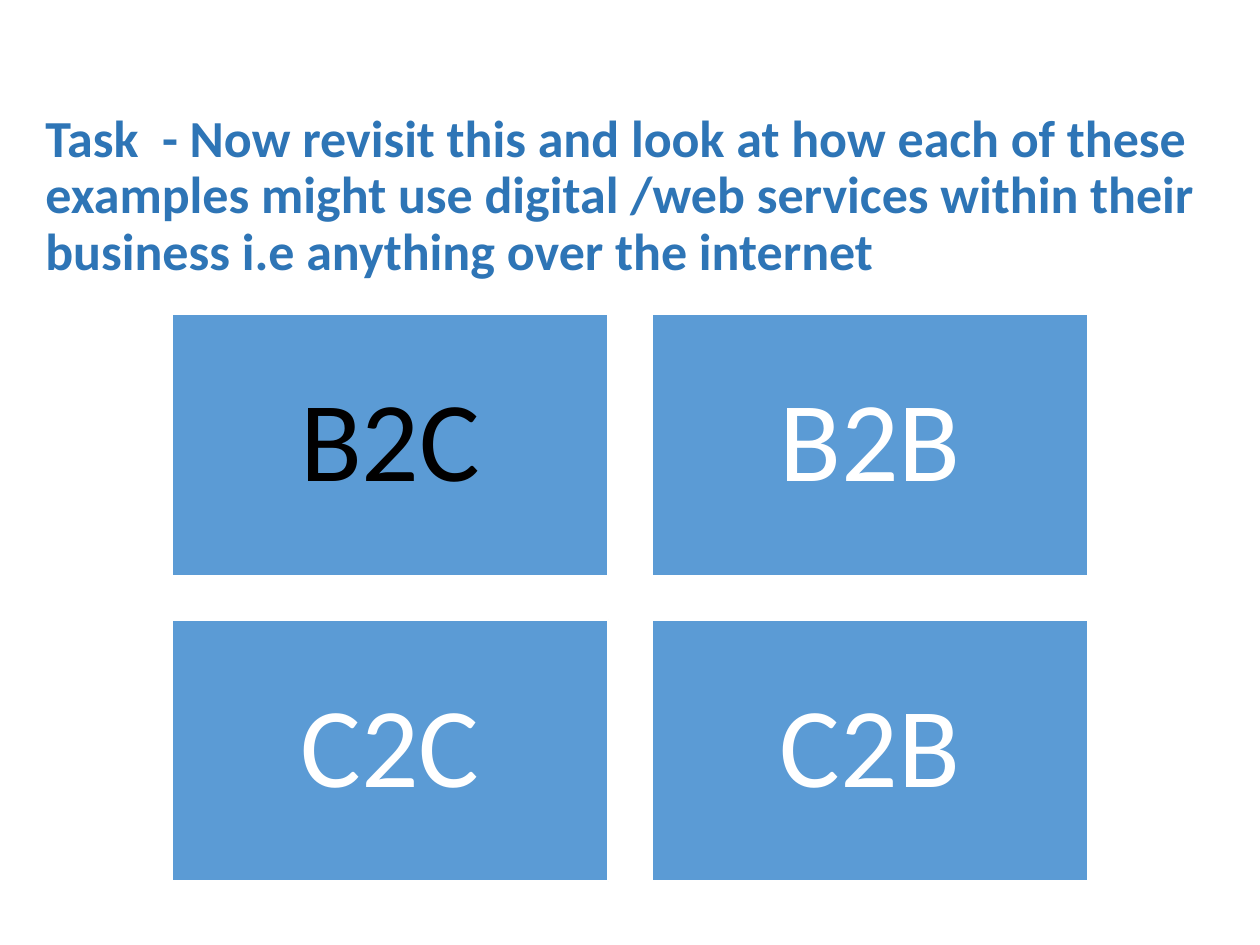
from dataclasses import dataclass

from pptx import Presentation
from pptx.dml.color import RGBColor
from pptx.enum.shapes import MSO_SHAPE
from pptx.enum.text import MSO_ANCHOR, MSO_AUTO_SIZE, PP_ALIGN
from pptx.util import Pt


@dataclass(frozen=True)
class Theme:
    font: str = "Calibri"
    title_size: float = 29.7
    tile_size: float = 65
    line_spacing: float = 0.9
    title: RGBColor = RGBColor(0x2E, 0x75, 0xB6)
    tile: RGBColor = RGBColor(0x5B, 0x9B, 0xD5)
    white: RGBColor = RGBColor(0xFF, 0xFF, 0xFF)
    black: RGBColor = RGBColor(0x01, 0x00, 0x00)


THEME = Theme()

TITLE = ("Task  - Now revisit this and look at how each of these examples might use "
         "digital /web services within their business i.e anything over the internet")
MODELS = [("B2C", THEME.black), ("B2B", THEME.white),
          ("C2C", THEME.white), ("C2B", THEME.white)]

# Tile grid, in points
COLUMNS = 2
GRID_LEFT, GRID_TOP = 98.5, 179.5
TILE_W, TILE_H = 249, 149.5
GAP = 25.2
TILE_INSET = 19.5


def format_text(p, size, color, align, bold=False):
    p.alignment = align
    p.line_spacing = THEME.line_spacing
    p.font.name = THEME.font
    p.font.size = Pt(size)
    p.font.bold = bold
    p.font.color.rgb = color


def add_title(s, text):
    title = s.shapes.title
    title.left, title.top, title.width, title.height = Pt(18.7), Pt(77), Pt(684.7), Pt(71.3)
    tf = title.text_frame
    tf.text = text
    tf.word_wrap = True
    tf.auto_size = MSO_AUTO_SIZE.NONE
    tf.vertical_anchor = MSO_ANCHOR.MIDDLE
    format_text(tf.paragraphs[0], THEME.title_size, THEME.title, PP_ALIGN.LEFT, bold=True)


def add_tile(s, left, top, label, color):
    sp = s.shapes.add_shape(MSO_SHAPE.RECTANGLE, Pt(left), Pt(top), Pt(TILE_W), Pt(TILE_H))
    sp.shadow.inherit = False
    sp.fill.solid()
    sp.fill.fore_color.rgb = THEME.tile
    sp.line.color.rgb = THEME.white
    sp.line.width = Pt(1)
    tf = sp.text_frame
    tf.text = label
    tf.word_wrap = True
    tf.vertical_anchor = MSO_ANCHOR.MIDDLE
    tf.margin_left = tf.margin_right = tf.margin_top = tf.margin_bottom = Pt(TILE_INSET)
    format_text(tf.paragraphs[0], THEME.tile_size, color, PP_ALIGN.CENTER)


def main():
    prs = Presentation()
    prs.slide_width, prs.slide_height = Pt(720), Pt(540)
    s = prs.slides.add_slide(prs.slide_layouts[5])

    # Task heading
    add_title(s, TITLE)

    # Business models, row by row
    for i, (label, color) in enumerate(MODELS):
        row, col = divmod(i, COLUMNS)
        add_tile(s, GRID_LEFT + col * (TILE_W + GAP), GRID_TOP + row * (TILE_H + GAP),
                 label, color)

    prs.save("out.pptx")


if __name__ == "__main__":
    main()
